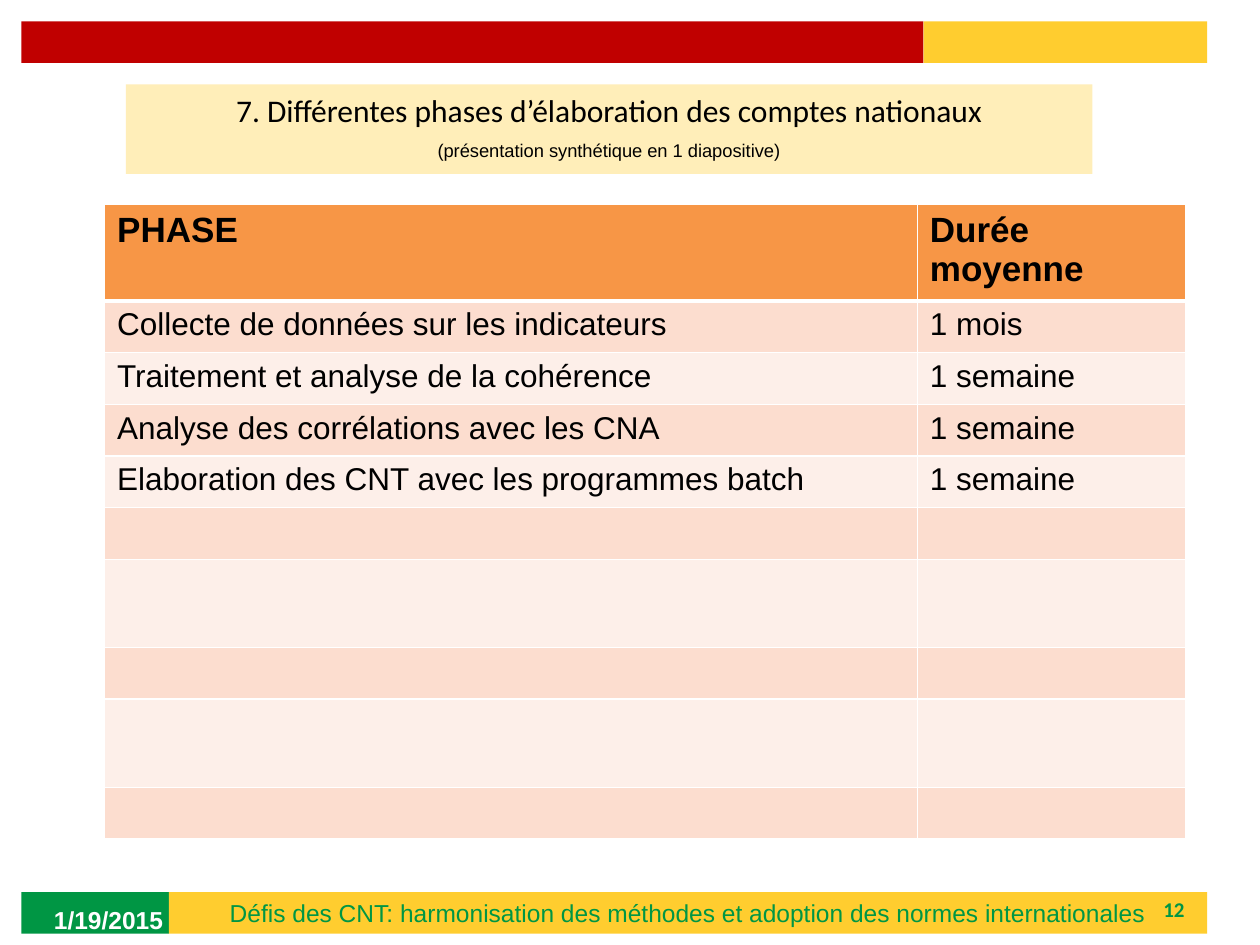
from dataclasses import dataclass

from lxml import etree
from pptx import Presentation
from pptx.dml.color import RGBColor
from pptx.enum import shapes, text
from pptx.oxml import ns
from pptx.util import Inches, Pt


@dataclass(frozen=True)
class Theme:
    green: str = "009644"
    yellow: str = "FFCD2F"
    red: str = "C00000"
    cream: str = "FFEEB9"
    orange: str = "F79646"
    bands: tuple = ("FCDDCF", "FDEFE9")
    white: str = "FFFFFF"
    black: str = "000000"
    body: str = "Arial"
    heading: str = "Calibri"
    header_size: float = 20
    text_size: float = 18
    footer_size: float = 14
    number_size: float = 12
    note_size: float = 10.5


THEME = Theme()
LEFT, CENTER, RIGHT = (text.PP_ALIGN.LEFT, text.PP_ALIGN.CENTER,
                       text.PP_ALIGN.RIGHT)

PHASES = [
    ("PHASE", "Durée moyenne"),
    ("Collecte de données sur les indicateurs", "1 mois"),
    ("Traitement et analyse de la cohérence", "1 semaine"),
    ("Analyse des corrélations avec les CNA", "1 semaine"),
    ("Elaboration des CNT avec les programmes batch", "1 semaine"),
] + [("", "")] * 5
COLUMN_WIDTHS = (6.45, 2.13)
ROW_HEIGHTS = (0.77,) + (0.41,) * 5 + (0.7, 0.41) * 2


def style(p, size, color=THEME.black, font=THEME.body, bold=False, align=LEFT):
    p.alignment = align
    p.font.size = Pt(size)
    p.font.name = font
    p.font.bold = bold
    p.font.color.rgb = RGBColor.from_string(color)


def add_block(s, x, y, w, h, color):
    sp = s.shapes.add_shape(shapes.MSO_SHAPE.RECTANGLE,
                            Inches(x), Inches(y), Inches(w), Inches(h))
    sp.shadow.inherit = False
    sp.fill.solid()
    sp.fill.fore_color.rgb = RGBColor.from_string(color)
    sp.line.fill.background()
    sp.text_frame.word_wrap = True
    return sp


def add_label(s, x, y, w, h, label, size, **look):
    tf = s.shapes.add_textbox(Inches(x), Inches(y),
                              Inches(w), Inches(h)).text_frame
    tf.word_wrap = True
    tf.vertical_anchor = text.MSO_ANCHOR.MIDDLE
    tf.text = label
    style(tf.paragraphs[0], size, **look)


def add_top_band(s, x, y, w, h):
    accent = 2.25
    add_block(s, x, y, w - accent, h, THEME.red)
    add_block(s, x + w - accent, y, accent, h, THEME.yellow)


def add_footer(s, x, y, w, h):
    date_w = 1.17
    add_block(s, x, y, date_w, h, THEME.green)
    tf = add_block(s, x + date_w, y, w - date_w, h, THEME.yellow).text_frame
    tf.text = ("Défis des CNT: harmonisation des méthodes "
               "et adoption des normes internationales")
    style(tf.paragraphs[0], THEME.footer_size, THEME.green, align=CENTER)
    add_label(s, x + w - 2.41, y, 2.33, 0.27, "12", THEME.number_size,
              color=THEME.green, font=THEME.heading, bold=True, align=RIGHT)
    add_label(s, x + 0.16, y + 0.02, 2.33, 0.4, "1/19/2015",
              THEME.footer_size, color=THEME.white, bold=True)


def add_title(s, x, y, w, h):
    tf = add_block(s, x, y, w, h, THEME.cream).text_frame
    tf.vertical_anchor = text.MSO_ANCHOR.TOP
    tf.text = "7. Différentes phases d’élaboration des comptes nationaux"
    style(tf.paragraphs[0], THEME.text_size, font=THEME.heading, align=CENTER)
    p = tf.add_paragraph()
    p.text = "(présentation synthétique en 1 diapositive)"
    style(p, THEME.note_size, align=CENTER)
    p.space_before = Pt(6)


def set_borders(cell, bottom):
    """Draw white borders, 1 pt except for the given bottom width."""
    tc_pr = cell._tc.get_or_add_tcPr()
    widths = {"lnL": 1, "lnR": 1, "lnT": 1, "lnB": bottom}
    for i, (side, width) in enumerate(widths.items()):
        ln = etree.Element(ns.qn("a:" + side), w=str(Pt(width)))
        fill = etree.SubElement(ln, ns.qn("a:solidFill"))
        etree.SubElement(fill, ns.qn("a:srgbClr"), val=THEME.white)
        tc_pr.insert(i, ln)


def add_phase_table(s, x, y, w, h):
    table = s.shapes.add_table(len(PHASES), len(COLUMN_WIDTHS), Inches(x),
                               Inches(y), Inches(w), Inches(h)).table
    for column, width in zip(table.columns, COLUMN_WIDTHS):
        column.width = Inches(width)
    for i, (values, height) in enumerate(zip(PHASES, ROW_HEIGHTS)):
        header = i == 0
        table.rows[i].height = Inches(height)
        for j, value in enumerate(values):
            cell = table.cell(i, j)
            cell.text = value
            cell.fill.solid()
            cell.fill.fore_color.rgb = RGBColor.from_string(
                THEME.orange if header else THEME.bands[(i - 1) % 2])
            set_borders(cell, bottom=3 if header else 1)
            style(cell.text_frame.paragraphs[0],
                  THEME.header_size if header else THEME.text_size,
                  bold=header)


def main():
    prs = Presentation()
    prs.slide_width, prs.slide_height = Inches(10), Inches(7.5)
    s = prs.slides.add_slide(prs.slide_layouts[6])
    add_footer(s, 0.17, 7.08, 9.41, 0.33)
    add_top_band(s, 0.17, 0.17, 9.41, 0.33)
    add_title(s, 1, 0.67, 7.67, 0.71)
    add_phase_table(s, 0.83, 1.62, sum(COLUMN_WIDTHS), sum(ROW_HEIGHTS))
    prs.save("out.pptx")


if __name__ == "__main__":
    main()
